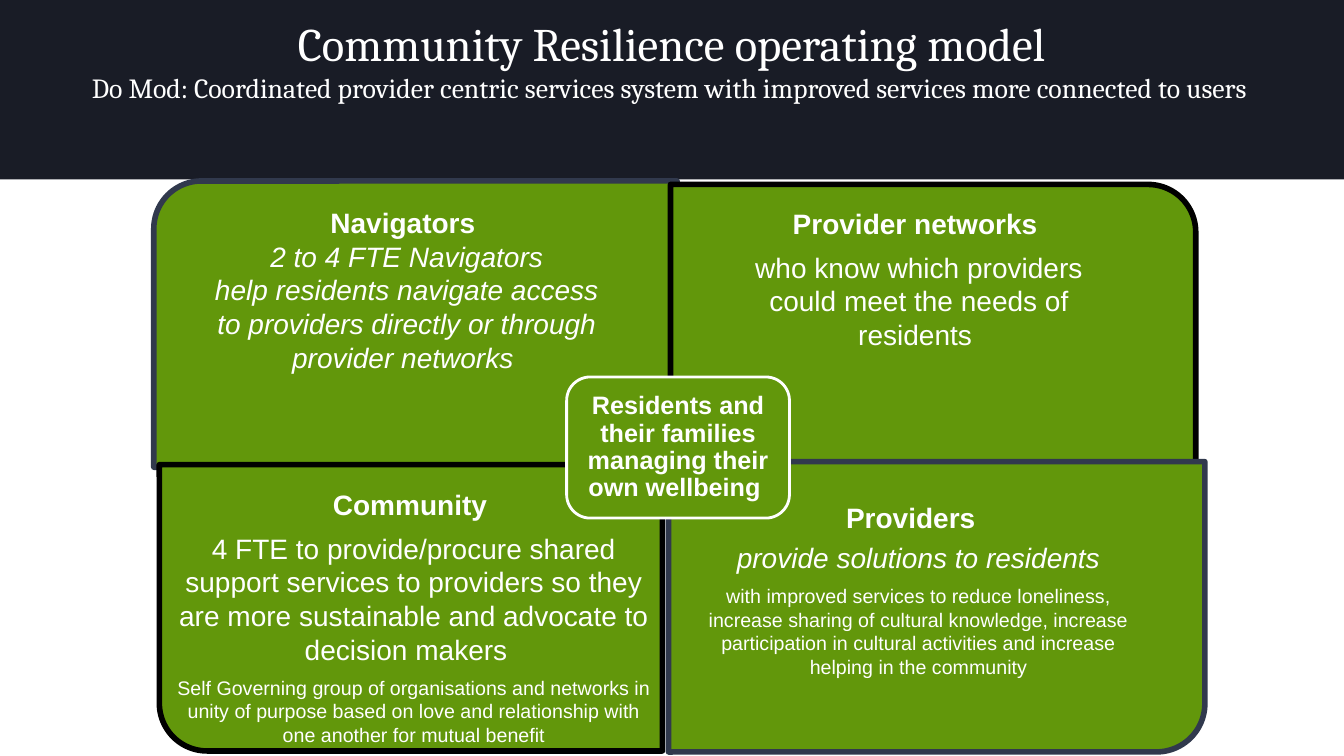
from dataclasses import dataclass

from pptx import Presentation
from pptx.dml.color import RGBColor
from pptx.enum.shapes import MSO_SHAPE
from pptx.enum.text import MSO_ANCHOR, PP_ALIGN
from pptx.util import Inches, Pt

GREEN = RGBColor(0x62, 0x97, 0x0B)
SLATE = RGBColor(0x31, 0x39, 0x4D)
NAVY = RGBColor(0x19, 0x1C, 0x26)
BLACK = RGBColor(0, 0, 0)
WHITE = RGBColor(0xFF, 0xFF, 0xFF)


@dataclass
class Panel:
    left: float
    top: float
    width: float
    height: float
    outline: RGBColor
    rotation: int = 0
    preset: MSO_SHAPE = MSO_SHAPE.ROUND_1_RECTANGLE
    outline_width: float = 4


@dataclass
class Line:
    text: str
    size: float = 20
    bold: bool = False
    italic: bool = False
    font: str = "Arial"
    spacing: float = 1.0
    after: float = 7


@dataclass
class Message:
    left: float
    top: float
    width: float
    height: float
    lines: list[Line]


QUADRANTS = [
    Panel(2.7, 0.62, 2.84, 5.19, SLATE, 270),
    Panel(6.65, 1.83, 5.21, 2.84, BLACK),
    Panel(1.58, 4.61, 4.99, 2.84, BLACK, 180),
    Panel(7.85, 3.36, 2.88, 5.32, SLATE, 90),
]
HUB = Panel(5.62, 3.74, 2.21, 1.4, WHITE, 0, MSO_SHAPE.ROUNDED_RECTANGLE, 2)
HUB_LINES = [
    Line("Residents and their families managing their own wellbeing ",
         18, bold=True, spacing=0.9, after=0),
]
MESSAGES = [
    Message(6.77, 4.94, 4.68, 1.9, [
        Line("Providers  ", bold=True, spacing=0.9),
        Line("provide solutions to residents", italic=True, spacing=0.9),
        Line("with improved services to reduce loneliness, increase sharing of "
             "cultural knowledge, increase participation in cultural activities "
             "and increase helping in the community", 14),
    ]),
    Message(1.65, 4.78, 4.91, 2.7, [
        Line("Community ", bold=True),
        Line("4 FTE to provide/procure shared support services to providers so "
             "they are more sustainable and advocate to decision makers  "),
        Line("Self Governing group of organisations and networks in unity of "
             "purpose based on love and relationship with one another for "
             "mutual benefit", 14),
    ]),
    Message(2.05, 1.98, 3.97, 1.75, [
        Line("Navigators ", bold=True, after=0),
        Line("2 to 4 FTE Navigators", italic=True, after=0),
        Line("help residents navigate access to providers directly or through "
             "provider networks ", italic=True, after=0),
    ]),
    Message(7.31, 1.99, 3.61, 1.6, [
        Line("Provider networks ", bold=True),
        Line("who know which providers could meet the needs of residents "),
    ]),
]
HEADING_LINES = [
    Line("Community Resilience operating model", 33.3, font="Cambria", after=0),
    Line("Do Mod: Coordinated provider centric services system with improved "
         "services more connected to users ", 19.8, font="Cambria", after=0),
]


def write_lines(frame, lines: list[Line], inset: float, anchor: MSO_ANCHOR) -> None:
    frame_format = {"word_wrap": True, "vertical_anchor": anchor}
    for side in ("left", "top", "right", "bottom"):
        frame_format[f"margin_{side}"] = Inches(inset)
    for attribute, value in frame_format.items():
        setattr(frame, attribute, value)
    for index, line in enumerate(lines):
        paragraph = frame.add_paragraph() if index else frame.paragraphs[0]
        paragraph_format = {
            "alignment": PP_ALIGN.CENTER,
            "line_spacing": line.spacing,
            "space_before": Pt(0),
            "space_after": Pt(line.after),
        }
        for attribute, value in paragraph_format.items():
            setattr(paragraph, attribute, value)
        run = paragraph.add_run()
        run.text = line.text
        run_format = {"name": line.font, "size": Pt(line.size),
                      "bold": line.bold, "italic": line.italic}
        for attribute, value in run_format.items():
            setattr(run.font, attribute, value)
        run.font.color.rgb = WHITE


def draw_panel(slide, panel: Panel):
    shape = slide.shapes.add_shape(
        panel.preset, Inches(panel.left), Inches(panel.top),
        Inches(panel.width), Inches(panel.height))
    shape.rotation = panel.rotation
    shape.shadow.inherit = False
    shape.fill.solid()
    shape.fill.fore_color.rgb = GREEN
    shape.line.color.rgb = panel.outline
    shape.line.width = Pt(panel.outline_width)
    return shape


def draw_message(slide, message: Message) -> None:
    box = slide.shapes.add_textbox(
        Inches(message.left), Inches(message.top),
        Inches(message.width), Inches(message.height))
    write_lines(box.text_frame, message.lines, 0.06, MSO_ANCHOR.TOP)


def draw_heading(slide, width: int) -> None:
    heading = slide.shapes.title
    placement = {"left": 0, "top": 0, "width": width, "height": Inches(1.78)}
    for attribute, value in placement.items():
        setattr(heading, attribute, value)
    heading.fill.solid()
    heading.fill.fore_color.rgb = NAVY
    write_lines(heading.text_frame, HEADING_LINES, 0.15, MSO_ANCHOR.TOP)


def main() -> None:
    presentation = Presentation()
    presentation.slide_width = Inches(13.33)
    presentation.slide_height = Inches(7.5)
    slide = presentation.slides.add_slide(presentation.slide_layouts[5])
    draw_heading(slide, presentation.slide_width)
    for quadrant in QUADRANTS:
        draw_panel(slide, quadrant)
    hub = draw_panel(slide, HUB)
    write_lines(hub.text_frame, HUB_LINES, 0.07, MSO_ANCHOR.MIDDLE)
    for message in MESSAGES:
        draw_message(slide, message)
    presentation.save("out.pptx")


if __name__ == "__main__":
    main()
